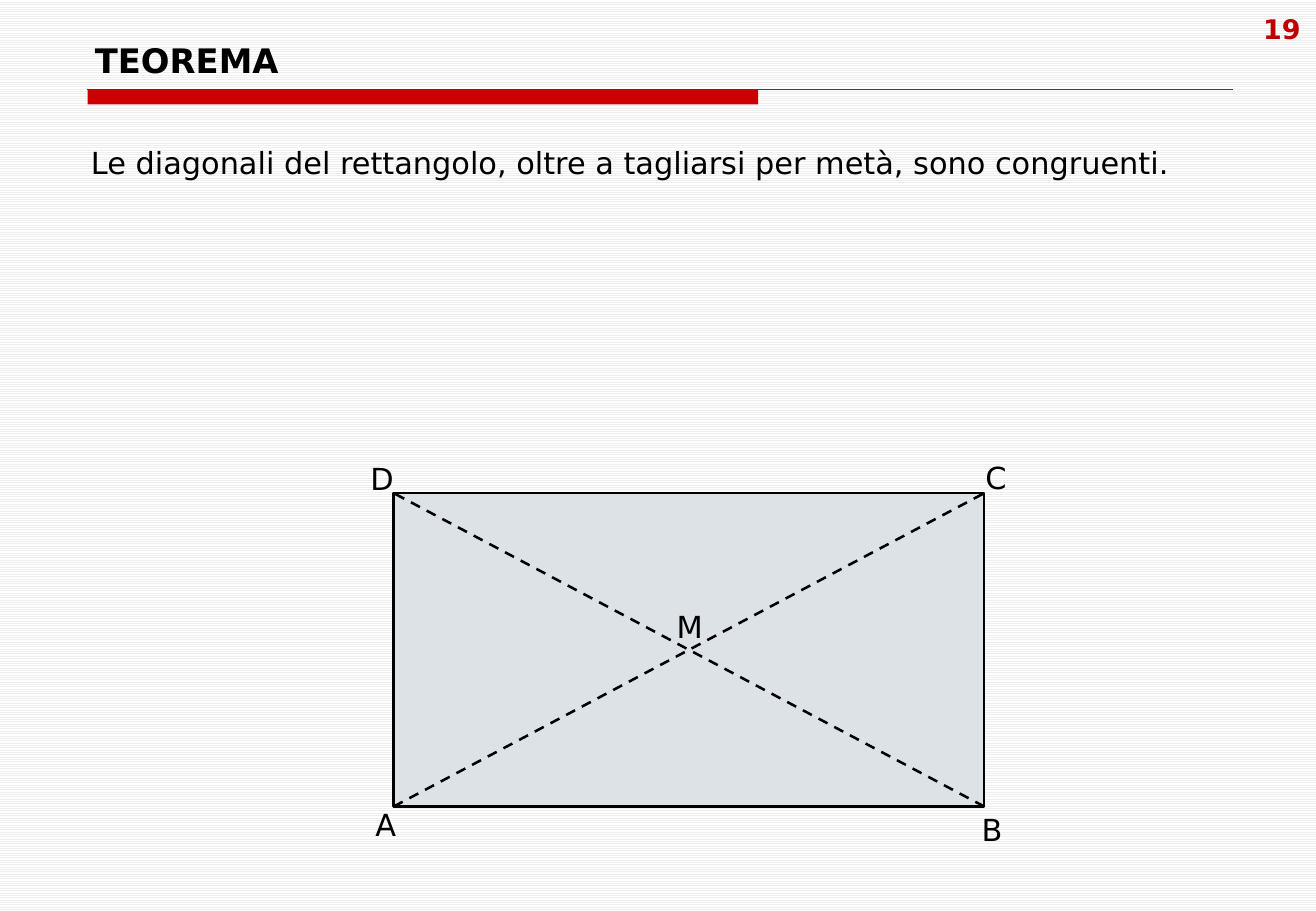
from dataclasses import dataclass

from lxml.etree import SubElement
from pptx import Presentation
from pptx.dml.color import RGBColor
from pptx.enum.dml import MSO_LINE, MSO_PATTERN
from pptx.enum.shapes import MSO_CONNECTOR, MSO_SHAPE
from pptx.enum.text import MSO_ANCHOR, MSO_AUTO_SIZE, PP_ALIGN
from pptx.oxml.ns import qn
from pptx.slide import Slide
from pptx.text.text import TextFrame
from pptx.util import Inches, Pt


@dataclass(frozen=True)
class Theme:
    font: str = "DejaVu Sans"
    ink: RGBColor = RGBColor(0, 0, 0)
    paper: RGBColor = RGBColor(0xFF, 0xFF, 0xFF)
    stripe: RGBColor = RGBColor(0xEE, 0xEE, 0xEE)
    accent: RGBColor = RGBColor(0xCC, 0, 0)
    number: RGBColor = RGBColor(0xC0, 0, 0)
    figure: RGBColor = RGBColor(0xDD, 0xE2, 0xE7)
    title_size: float = 20
    body_size: float = 18
    number_size: float = 16
    rule_width: float = 0.75
    figure_width: float = 1.5


@dataclass(frozen=True)
class Box:
    left: float
    top: float
    width: float
    height: float

    @property
    def right(self) -> float:
        return self.left + self.width

    @property
    def bottom(self) -> float:
        return self.top + self.height

    def lengths(self) -> list[Inches]:
        return [Inches(v) for v in (self.left, self.top, self.width, self.height)]


@dataclass(frozen=True)
class Label:
    text: str
    box: Box


@dataclass(frozen=True)
class Segment:
    start: tuple[float, float]
    end: tuple[float, float]


THEME = Theme()
TITLE = Label("TEOREMA", Box(0.68, 0.33, 9.48, 0.38))
STATEMENT = Label(
    "Le diagonali del rettangolo, oltre a tagliarsi per metà, sono congruenti.",
    Box(0.65, 1.14, 10.02, 0.4),
)
NUMBER = Label("19", Box(10.18, 0.05, 0.74, 0.52))
TITLE_BAR = Box(0.72, 0.74, 5.52, 0.12)
TITLE_RULE = Segment((0.72, 0.74), (10.15, 0.74))
RECTANGLE = Box(3.24, 4.06, 4.86, 2.58)
DIAGONALS = [
    Segment((RECTANGLE.left, RECTANGLE.bottom), (RECTANGLE.right, RECTANGLE.top)),
    Segment((RECTANGLE.right, RECTANGLE.bottom), (RECTANGLE.left, RECTANGLE.top)),
]
POINTS = [
    Label("A", Box(2.99, 6.59, 0.37, 0.4)),
    Label("B", Box(7.98, 6.63, 0.37, 0.4)),
    Label("C", Box(8.01, 3.73, 0.38, 0.4)),
    Label("D", Box(2.95, 3.74, 0.39, 0.4)),
    Label("M", Box(5.47, 4.96, 0.41, 0.4)),
]


def write(frame: TextFrame, text: str, size: float, color: RGBColor = THEME.ink,
          bold: bool = False, align: PP_ALIGN = PP_ALIGN.LEFT) -> None:
    frame.text = text
    paragraph = frame.paragraphs[0]
    paragraph.alignment = align
    font = paragraph.runs[0].font
    font.name, font.size, font.bold = THEME.font, Pt(size), bold
    font.color.rgb = color


def add_label(slide: Slide, label: Label, wrap: bool = True,
              size: float = THEME.body_size, color: RGBColor = THEME.ink,
              bold: bool = False, align: PP_ALIGN = PP_ALIGN.LEFT) -> None:
    frame = slide.shapes.add_textbox(*label.box.lengths()).text_frame
    frame.word_wrap = wrap
    write(frame, label.text, size, color, bold, align)


def add_rectangle(slide: Slide, box: Box, fill: RGBColor,
                  line: RGBColor | None = None) -> None:
    shape = slide.shapes.add_shape(MSO_SHAPE.RECTANGLE, *box.lengths())
    shape.shadow.inherit = False
    shape.fill.solid()
    shape.fill.fore_color.rgb = fill
    if line is None:
        shape.line.fill.background()
    else:
        shape.line.color.rgb = line
        shape.line.width = Pt(THEME.figure_width)


def add_segment(slide: Slide, segment: Segment, color: RGBColor, width: float,
                dash: MSO_LINE = MSO_LINE.SOLID) -> None:
    ends = [Inches(v) for v in (*segment.start, *segment.end)]
    connector = slide.shapes.add_connector(MSO_CONNECTOR.STRAIGHT, *ends)
    connector.line.color.rgb = color
    connector.line.width = Pt(width)
    connector.line.dash_style = dash
    SubElement(connector.element.spPr, qn("a:effectLst"))


def set_background(slide: Slide) -> None:
    fill = slide.background.fill
    fill.patterned()
    fill.pattern = MSO_PATTERN.LIGHT_HORIZONTAL
    fill.fore_color.rgb = THEME.stripe
    fill.back_color.rgb = THEME.paper


def set_title(slide: Slide) -> None:
    title = slide.shapes.title
    title.left, title.top, title.width, title.height = TITLE.box.lengths()
    frame = title.text_frame
    frame.auto_size = MSO_AUTO_SIZE.NONE
    frame.vertical_anchor = MSO_ANCHOR.BOTTOM
    write(frame, TITLE.text, THEME.title_size, bold=True)


def main() -> None:
    presentation = Presentation()
    presentation.slide_width = Inches(10.83)
    presentation.slide_height = Inches(7.5)
    slide = presentation.slides.add_slide(presentation.slide_layouts[5])

    set_background(slide)
    set_title(slide)
    add_rectangle(slide, TITLE_BAR, THEME.accent)
    add_segment(slide, TITLE_RULE, THEME.accent, THEME.rule_width)
    add_label(slide, NUMBER, size=THEME.number_size, color=THEME.number,
              bold=True, align=PP_ALIGN.CENTER)
    add_label(slide, STATEMENT)

    add_rectangle(slide, RECTANGLE, THEME.figure, THEME.ink)
    for diagonal in DIAGONALS:
        add_segment(slide, diagonal, THEME.ink, THEME.figure_width, MSO_LINE.DASH)
    for point in POINTS:
        add_label(slide, point, wrap=False)

    presentation.save("out.pptx")


if __name__ == "__main__":
    main()
